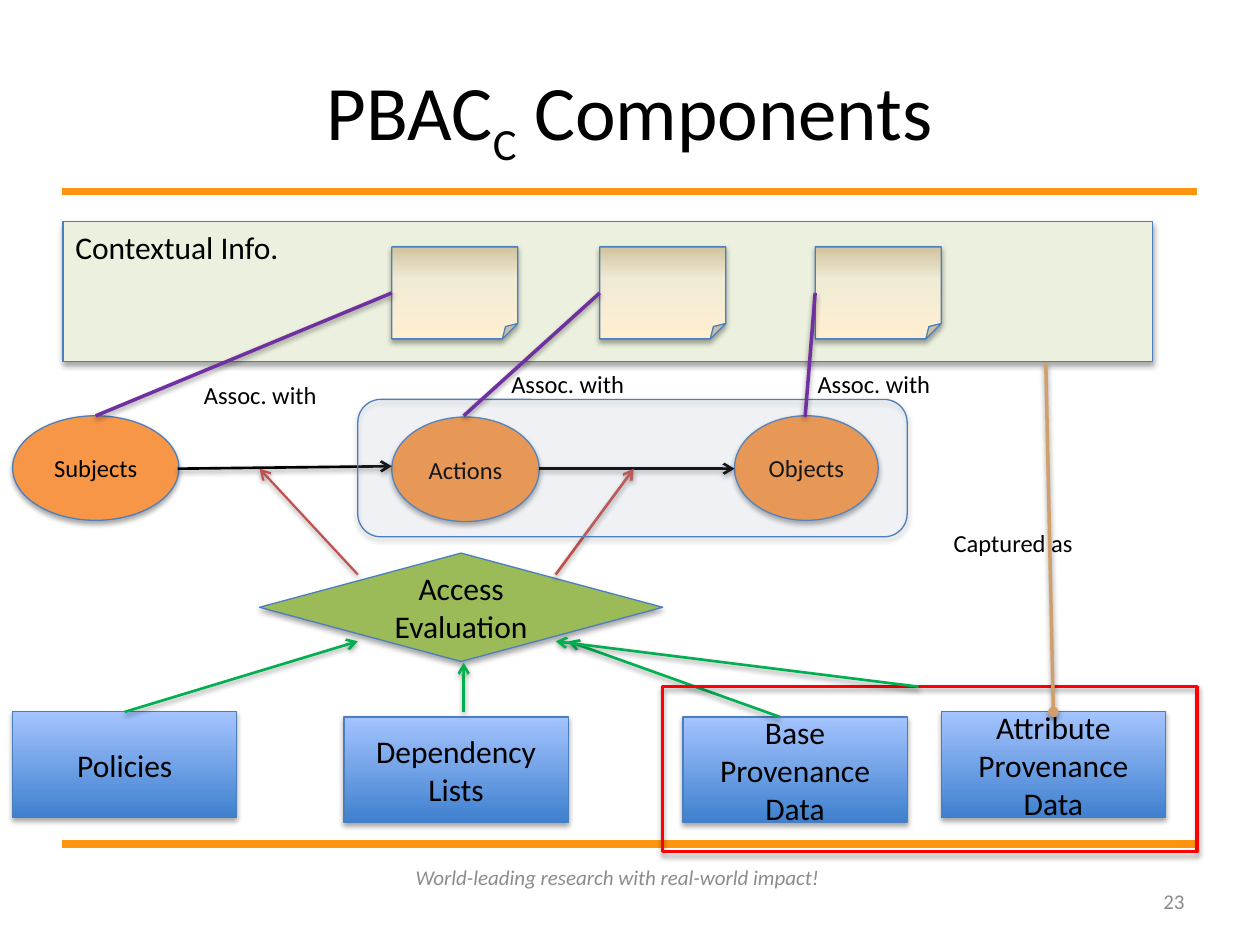
"""Build the slide on the components of the PBAC-C access control model."""
from copy import deepcopy
from dataclasses import dataclass
from typing import Optional, Union

from lxml.etree import SubElement
from pptx import Presentation
from pptx.dml.color import RGBColor
from pptx.enum.shapes import MSO_CONNECTOR, MSO_SHAPE as Kind
from pptx.enum.text import MSO_ANCHOR as Anchor, PP_ALIGN as Align
from pptx.oxml.ns import qn
from pptx.util import Inches, Pt

FONT = "Calibri"
COLORS = {
    "black": "000000", "rule": "FF950E", "grey": "8C8C8C", "outline": "4B7EBC",
    "orange": "F79646", "olive": "9BBB59", "group": "C6D9F1", "context": "EBF1DE",
    "flow": "00B050", "decide": "C0504D", "assoc": "7030A0", "capture": "D19F6C",
    "frame": "FF0000",
}
GRADIENTS = {
    "data": [(0, "3F80CE"), (1, "A4C4FF")],
    "note": [(0, "FFEFD1"), (0.65, "F0EBD5"), (1, "D1C39F")],
}
Point = tuple[float, float]
Box = tuple[float, float, float, float]


@dataclass
class Node:
    name: str
    kind: Kind
    box: Box
    fill: Optional[str]
    text: str = ""
    size: float = 18
    line: str = "outline"
    weight: float = 0.75
    alpha: Optional[int] = None


@dataclass
class Link:
    start: Point
    end: Point
    color: str
    weight: float = 1.5
    tail: Optional[str] = "arrow"
    begin_at: Optional[tuple[str, int]] = None
    end_at: Optional[tuple[str, int]] = None
    shadow: bool = True


@dataclass
class Label:
    text: str
    box: Box
    size: float = 14
    color: str = "black"
    align: Align = Align.LEFT
    anchor: Anchor = Anchor.TOP
    italic: bool = False
    wrap: bool = False


def rgb(name: str) -> RGBColor:
    return RGBColor.from_string(COLORS[name])


def write_text(frame, text: str, *, size: float, color: str = "black", align=Align.CENTER,
               anchor=Anchor.MIDDLE, italic: bool = False, wrap: bool = True) -> None:
    frame.word_wrap, frame.vertical_anchor = wrap, anchor
    frame.text = text
    for paragraph in frame.paragraphs:
        paragraph.alignment = align
        for run in paragraph.runs:
            run.font.name, run.font.size = FONT, Pt(size)
            run.font.italic, run.font.color.rgb = italic, rgb(color)


def set_effects(properties, opacity: Optional[int], distance: float = 1.8) -> None:
    effects = SubElement(properties, qn("a:effectLst"))
    if opacity is None:
        return
    shadow = SubElement(effects, qn("a:outerShdw"), blurRad=str(Pt(3.1)), dist=str(Pt(distance)),
                        dir="5400000", rotWithShape="0")
    shade = SubElement(shadow, qn("a:srgbClr"), val=COLORS["black"])
    SubElement(shade, qn("a:alpha"), val=str(opacity * 1000))


def fill_gradient(shape, stops: list[tuple[float, str]]) -> None:
    shape.fill.gradient()
    shape.fill.gradient_angle = 90
    stop_list = shape._element.spPr.find(qn("a:gradFill")).find(qn("a:gsLst"))
    while len(stop_list) < len(stops):
        stop_list.append(deepcopy(stop_list[0]))
    for stop, (position, color) in zip(shape.fill.gradient_stops, stops):
        stop.position, stop.color.rgb = position, RGBColor.from_string(color)


def draw_node(slide, node: Node, drawn: dict) -> None:
    shape = slide.shapes.add_shape(node.kind, *map(Inches, node.box))
    drawn[node.name] = shape
    if node.fill is None:
        shape.fill.background()
    elif node.fill in GRADIENTS:
        fill_gradient(shape, GRADIENTS[node.fill])
    else:
        shape.fill.solid()
        shape.fill.fore_color.rgb = rgb(node.fill)
    if node.alpha is not None:
        solid = shape._element.spPr.find(qn("a:solidFill"))
        SubElement(solid[0], qn("a:alpha"), val=str(node.alpha * 1000))
    shape.line.color.rgb, shape.line.width = rgb(node.line), Pt(node.weight)
    set_effects(shape._element.spPr, 35)
    if node.text:
        write_text(shape.text_frame, node.text, size=node.size)


def draw_link(slide, link: Link, drawn: dict) -> None:
    connector = slide.shapes.add_connector(
        MSO_CONNECTOR.STRAIGHT, *map(Inches, link.start + link.end))
    if link.begin_at:
        connector.begin_connect(drawn[link.begin_at[0]], link.begin_at[1])
    if link.end_at:
        connector.end_connect(drawn[link.end_at[0]], link.end_at[1])
    connector.line.color.rgb, connector.line.width = rgb(link.color), Pt(link.weight)
    if link.tail:
        SubElement(connector.line._get_or_add_ln(), qn("a:tailEnd"), type=link.tail)
    set_effects(connector._element.spPr, 38 if link.shadow else None, 1.6)


def draw_label(slide, label: Label, drawn: dict) -> None:
    box = slide.shapes.add_textbox(*map(Inches, label.box))
    write_text(box.text_frame, label.text, size=label.size, color=label.color, align=label.align,
               anchor=label.anchor, italic=label.italic, wrap=label.wrap)


def data_box(name: str, left: float, top: float, text: str) -> Node:
    return Node(name, Kind.RECTANGLE, (left, top, 1.78, 0.84), "data", text)


def entity(name: str, left: float, top: float, width: float) -> Node:
    return Node(name, Kind.OVAL, (left, top, width, 0.83), "orange", name, 14)


NOTES = {"subject note": 3.11, "action note": 4.76, "object note": 6.47}
ASSOCIATIONS = zip(NOTES, [(0.76, 3.3), (3.68, 3.3), (6.39, 3.31)])
PARTS: list[Union[Node, Link, Label]] = [
    *(Link((0.49, y), (9.5, y), "rule", 4.31, None, shadow=False) for y in (1.52, 6.7)),
    Label("World-leading research with real-world impact!", (3.09, 6.76, 3.62, 0.4), 12, "grey",
          Align.CENTER, Anchor.MIDDLE, True, True),
    Label("23", (7.17, 6.95, 2.33, 0.4), 12, "grey", Align.RIGHT, Anchor.MIDDLE, wrap=True),
    entity("Subjects", 0.1, 3.3, 1.32),
    entity("Actions", 3.11, 3.31, 1.17),
    entity("Objects", 5.83, 3.3, 1.14),
    Node("evaluation", Kind.FLOWCHART_DECISION, (2.06, 4.39, 3.2, 0.86), "olive",
         "Access Evaluation"),
    data_box("policies", 0.1, 5.65, "Policies"),
    data_box("dependencies", 2.73, 5.69, "Dependency\nLists"),
    data_box("base", 5.42, 5.69, "Base Provenance Data"),
    Link((1.41, 3.72), (3.11, 3.7), "black"),
    Link((4.28, 3.72), (5.83, 3.72), "black"),
    Link((6.19, 5.69), (4.51, 5.09), "flow"),
    Link((3.68, 5.65), (3.68, 5.26), "flow"),
    Link((0.99, 5.65), (2.84, 5.09), "flow", begin_at=("policies", 0)),
    Link((4.41, 4.56), (5.03, 3.72), "decide"),
    Link((2.84, 4.56), (2.06, 3.72), "decide", 1.25),
    Node("group", Kind.ROUNDED_RECTANGLE, (2.84, 3.17, 4.36, 1.09), "group", alpha=11),
    Node("context", Kind.RECTANGLE, (0.5, 1.76, 8.65, 1.11), "context"),
    *(Node(name, Kind.FOLDED_CORNER, (x, 1.96, 1, 0.73), "note") for name, x in NOTES.items()),
    Label("Contextual Info.", (0.5, 1.76, 1.84, 0.4), 18, wrap=True),
    *(Link(start, (NOTES[note], 2.32), "assoc", 2, None, end_at=(note, 1))
      for note, start in ASSOCIATIONS),
    data_box("attribute", 7.47, 5.65, "Attribute\nProvenance Data"),
    Node("provenance", Kind.RECTANGLE, (5.26, 5.45, 4.24, 1.31), None, line="frame", weight=2),
    Link((8.3, 2.88), (8.36, 5.65), "capture", 2, "oval", end_at=("attribute", 0)),
    Link((7.29, 5.45), (4.41, 5.09), "flow"),
    *(Label("Assoc. with", (x, y, 1.1, 0.34)) for x, y in [(1.52, 2.97), (3.96, 2.88), (6.39, 2.88)]),
    Label("Captured as", (7.47, 4.14, 1.2, 0.34)),
]
DRAW = {Node: draw_node, Link: draw_link, Label: draw_label}


def main() -> None:
    deck = Presentation()
    deck.slide_width, deck.slide_height = Inches(10), Inches(7.5)
    slide = deck.slides.add_slide(deck.slide_layouts[5])
    title = slide.shapes.title
    title.left, title.top, title.width, title.height = map(Inches, (0.5, 0.3, 9, 1.25))
    write_text(title.text_frame, "PBAC", size=44)
    for text, baseline in (("C", "-25000"), (" Components", "0")):
        run = title.text_frame.paragraphs[0].add_run()
        run.text = text
        run.font.name, run.font.size, run.font.color.rgb = FONT, Pt(44), rgb("black")
        run.font._element.set("baseline", baseline)
    drawn = {}
    for part in PARTS:
        DRAW[type(part)](slide, part, drawn)
    deck.save("out.pptx")


if __name__ == "__main__":
    main()
